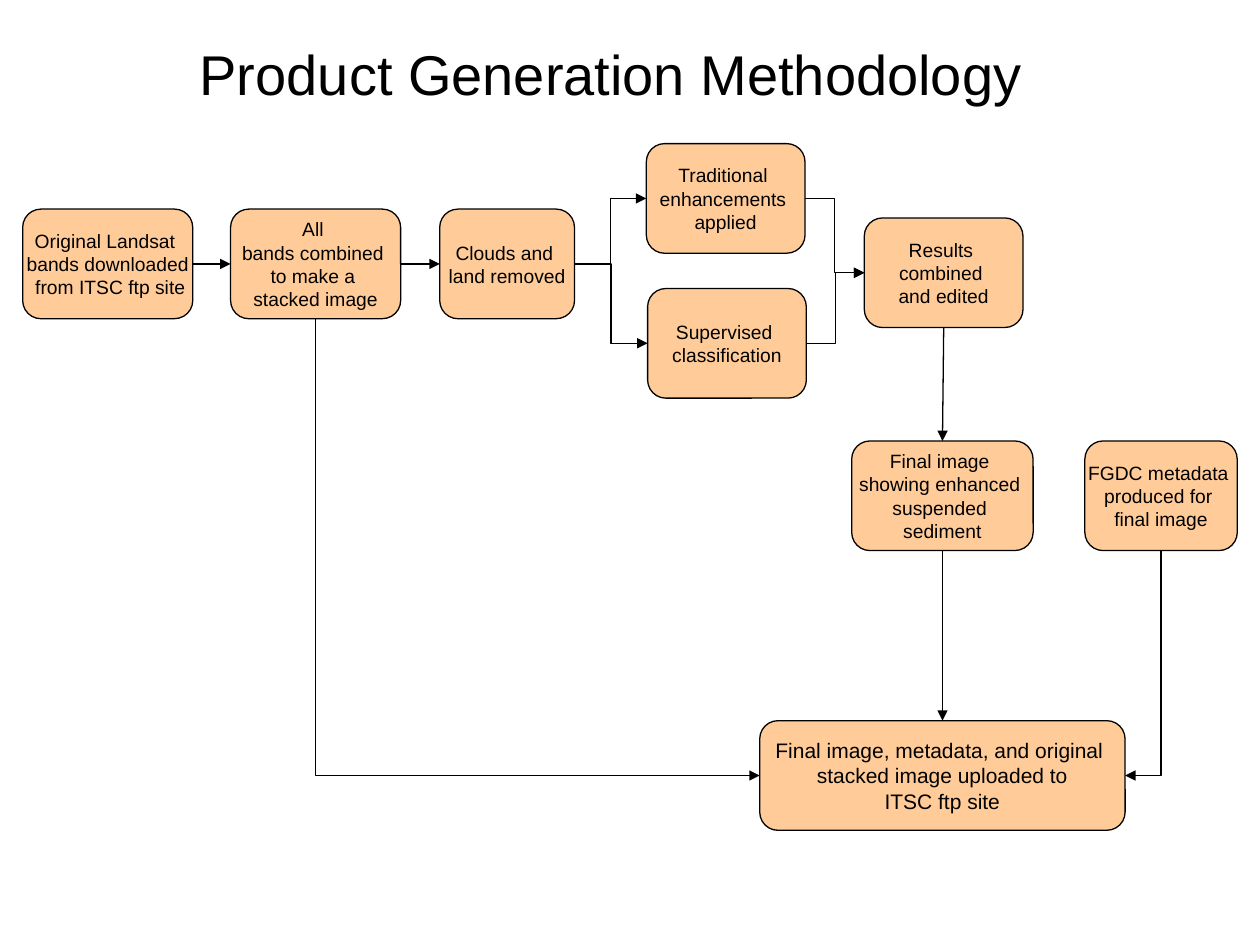
from lxml.etree import SubElement
from pptx import Presentation
from pptx.dml.color import RGBColor
from pptx.enum.shapes import MSO_CONNECTOR, MSO_SHAPE
from pptx.enum.text import MSO_ANCHOR, PP_ALIGN
from pptx.oxml.ns import qn
from pptx.util import Inches, Pt

ink = {name: RGBColor.from_string(code) for name, code in
       {"box": "FFCC99", "line": "000000", "text": "000000"}.items()}

deck = Presentation()
deck.slide_width, deck.slide_height = Inches(10), Inches(7.5)
unit = deck.slide_width / 100
slide = deck.slides.add_slide(deck.slide_layouts[5])


def write(frame, lines, size):
    frame.vertical_anchor = MSO_ANCHOR.MIDDLE
    frame.text = "\n".join(lines)
    for para in frame.paragraphs:
        para.alignment = PP_ALIGN.CENTER
        para.font.name = "Arial"
        para.font.size = Pt(size)
        para.font.color.rgb = ink["text"]


def link(kind, *ends):
    line = slide.shapes.add_connector(kind, *[round(end) for end in ends])
    line.line.color.rgb = ink["line"]
    line.line.width = Pt(0.75)
    SubElement(line.line._get_or_add_ln(), qn("a:tailEnd"), type="triangle")
    SubElement(line._element.spPr, qn("a:effectLst"))
    return line


title = slide.shapes.title
title.left, title.top, title.width, title.height = [
    round(unit * part) for part in (2, 2.6, 93, 6.4)]
write(title.text_frame, ["Product Generation Methodology"], 32)

tall = 8.7
plan = {
    "source": (1.8, 16.6, 13.5, 11, ["Original Landsat ", "bands downloaded", " from ITSC ftp site"]),
    "stack": (18.3, 16.6, 13.5, 11, ["All ", "bands combined ", "to make a ", "stacked image"]),
    "clouds": (34.9, 16.6, 10.7, 11, ["Clouds and ", "land removed"]),
    "enhance": (51.3, 11.4, 12.6, 11, ["Traditional ", "enhancements ", "applied"]),
    "class": (51.4, 22.9, 12.6, 11, ["Supervised ", "classification"]),
    "results": (68.6, 17.3, 12.6, 11, ["Results ", "combined ", "and edited"]),
    "final": (67.6, 35, 14.4, 11, ["Final image ", "showing enhanced ", "suspended ", "sediment"]),
    "meta": (86.1, 35, 12.1, 11, ["FGDC metadata ", "produced for ", "final image"]),
    "upload": (60.3, 57.2, 29, 12, ["Final image, metadata, and original ",
                                    "stacked image uploaded to", "ITSC ftp site"]),
}
boxes = {}
for name, (left, top, wide, size, lines) in plan.items():
    box = slide.shapes.add_shape(
        MSO_SHAPE.FLOWCHART_ALTERNATE_PROCESS,
        *[round(unit * part) for part in (left, top, wide, tall)])
    box.shadow.inherit = False
    box.fill.solid()
    box.fill.fore_color.rgb = ink["box"]
    box.line.color.rgb = ink["line"]
    box.line.width = Pt(0.75)
    box.text_frame.word_wrap = False
    write(box.text_frame, lines, size)
    boxes[name] = box

TOP, LEFT, BASE, RIGHT = range(4)
for start, out, end, into, kind in [
    ("source", RIGHT, "stack", LEFT, MSO_CONNECTOR.STRAIGHT),
    ("stack", RIGHT, "clouds", LEFT, MSO_CONNECTOR.STRAIGHT),
    ("results", BASE, "final", TOP, MSO_CONNECTOR.STRAIGHT),
    ("final", BASE, "upload", TOP, MSO_CONNECTOR.STRAIGHT),
    ("clouds", RIGHT, "enhance", LEFT, MSO_CONNECTOR.ELBOW),
    ("clouds", RIGHT, "class", LEFT, MSO_CONNECTOR.ELBOW),
    ("enhance", RIGHT, "results", LEFT, MSO_CONNECTOR.ELBOW),
    ("class", RIGHT, "results", LEFT, MSO_CONNECTOR.ELBOW),
]:
    line = link(kind, 0, 0, 0, 0)
    line.begin_connect(boxes[start], out)
    line.end_connect(boxes[end], into)

goal = boxes["upload"]
for name, side, turn in [("stack", 0, -1), ("meta", goal.width, 1)]:
    box = boxes[name]
    x1, y1 = box.left + box.width / 2, box.top + box.height
    x2, y2 = goal.left + side, goal.top + goal.height / 2
    midx, midy = (x1 + x2) / 2, (y1 + y2) / 2
    run, rise = turn * (y2 - y1) / 2, abs(x2 - x1) / 2
    line = link(MSO_CONNECTOR.ELBOW, midx - run, midy - rise, midx + run, midy + rise)
    shape = line._element.spPr
    shape.find(qn("a:prstGeom")).set("prst", "bentConnector2")
    shape.find(qn("a:xfrm")).set("rot", str(turn * 90 % 360 * 60000))

deck.save("out.pptx")
